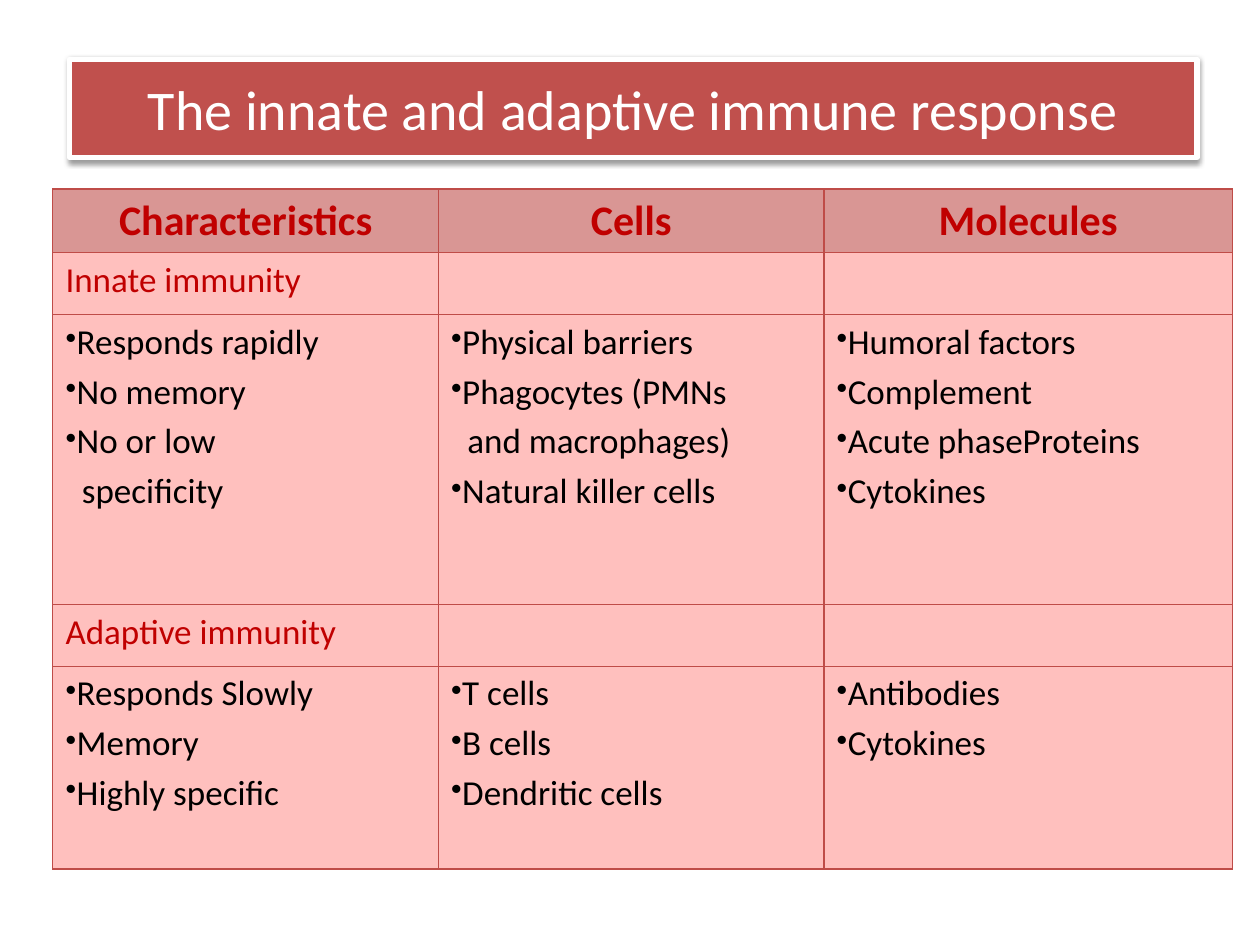
from lxml import etree
from pptx import Presentation
from pptx.dml.color import RGBColor
from pptx.enum import shapes, text
from pptx.oxml import parse_xml
from pptx.oxml.ns import nsdecls, qn
from pptx.util import Inches, Pt

FONT = "Calibri"
COLORS = {
    "title": "C0504D",
    "white": "FFFFFF",
    "black": "000000",
    "heading": "C00000",
    "header_fill": "D99694",
    "body_fill": "FFC0BE",
    "border": "BF4C48",
}
COLUMNS = [3.06, 3.06, 3.24]
ROW_HEIGHTS = [0.48, 0.49, 2.3, 0.49, 1.61]
HEADERS = ["Characteristics", "Cells", "Molecules"]
# A line starting with ">" continues the bullet above it.
SECTIONS = [
    ("Innate immunity", [
        ["Responds rapidly", "No memory", "No or low", ">specificity"],
        ["Physical barriers", "Phagocytes (PMNs", ">and macrophages)",
         "Natural killer cells"],
        ["Humoral factors", "Complement", "Acute phaseProteins", "Cytokines"],
    ]),
    ("Adaptive immunity", [
        ["Responds Slowly", "Memory", "Highly specific"],
        ["T cells", "B cells", "Dendritic cells"],
        ["Antibodies", "Cytokines"],
    ]),
]


def rgb(name):
    return RGBColor.from_string(COLORS[name])


def set_font(p, size, color, bold=False):
    p.font.name = FONT
    p.font.size = Pt(size)
    p.font.bold = bold
    p.font.color.rgb = rgb(color)


def add_shadow(s):
    s.shadow.inherit = False
    s._element.spPr.find(qn("a:effectLst")).append(parse_xml(
        f'<a:outerShdw {nsdecls("a")} blurRad="{Pt(3.1)}" dist="{Pt(1.6)}" '
        'dir="5400000" rotWithShape="0"><a:srgbClr val="000000">'
        '<a:alpha val="38000"/></a:srgbClr></a:outerShdw>'))


def add_title(slide, title):
    s = slide.shapes.add_shape(shapes.MSO_SHAPE.RECTANGLE, Inches(0.55),
                               Inches(0.47), Inches(8.95), Inches(0.78))
    s.fill.solid()
    s.fill.fore_color.rgb = rgb("title")
    s.line.color.rgb = rgb("white")
    s.line.width = Pt(3)
    add_shadow(s)
    tf = s.text_frame
    tf.word_wrap = True
    tf.vertical_anchor = text.MSO_ANCHOR.MIDDLE
    p = tf.paragraphs[0]
    p.text = title
    p.alignment = text.PP_ALIGN.CENTER
    set_font(p, 32, "white")


def style_cell(cell, fill):
    """Give the cell thin borders on all sides and a solid fill."""
    tc_pr = cell._tc.get_or_add_tcPr()
    for side in ("lnL", "lnR", "lnT", "lnB"):
        tc_pr.append(parse_xml(
            f'<a:{side} {nsdecls("a")} w="{Pt(0.75)}"><a:solidFill>'
            f'<a:srgbClr val="{COLORS["border"]}"/></a:solidFill></a:{side}>'))
    cell.fill.solid()
    cell.fill.fore_color.rgb = rgb(fill)


def write_heading(cell, heading, size, bold=False, align=text.PP_ALIGN.LEFT):
    p = cell.text_frame.paragraphs[0]
    p.text = heading
    p.alignment = align
    set_font(p, size, "heading", bold)


def write_bullets(cell, lines):
    tf = cell.text_frame
    for i, line in enumerate(lines):
        p = tf.add_paragraph() if i else tf.paragraphs[0]
        p.text = line.lstrip(">")
        if i:
            p.space_before = Pt(4)
        p_pr = p._p.get_or_add_pPr()
        if line.startswith(">"):
            p_pr.set("marL", str(Inches(0.13)))
        else:
            etree.SubElement(p_pr, qn("a:buSzPct")).set("val", "90000")
            etree.SubElement(p_pr, qn("a:buChar")).set("char", "•")
        set_font(p, 20, "black")


def add_comparison(slide):
    table = slide.shapes.add_table(
        len(ROW_HEIGHTS), len(COLUMNS), Inches(0.42), Inches(1.5),
        Inches(sum(COLUMNS)), Inches(sum(ROW_HEIGHTS))).table
    for column, width in zip(table.columns, COLUMNS):
        column.width = Inches(width)
    for i, height in enumerate(ROW_HEIGHTS):
        table.rows[i].height = Inches(height)
        for cell in table.rows[i].cells:
            style_cell(cell, "body_fill" if i else "header_fill")
    for col, header in enumerate(HEADERS):
        write_heading(table.cell(0, col), header, 24, True,
                      text.PP_ALIGN.CENTER)
    for i, (heading, lists) in enumerate(SECTIONS):
        row = 1 + 2 * i
        write_heading(table.cell(row, 0), heading, 20)
        for col, lines in enumerate(lists):
            write_bullets(table.cell(row + 1, col), lines)


def main():
    prs = Presentation()
    prs.slide_width, prs.slide_height = Inches(10), Inches(7.5)
    slide = prs.slides.add_slide(prs.slide_layouts[6])
    add_title(slide, "The innate and adaptive immune response")
    add_comparison(slide)
    prs.save("out.pptx")


if __name__ == "__main__":
    main()
